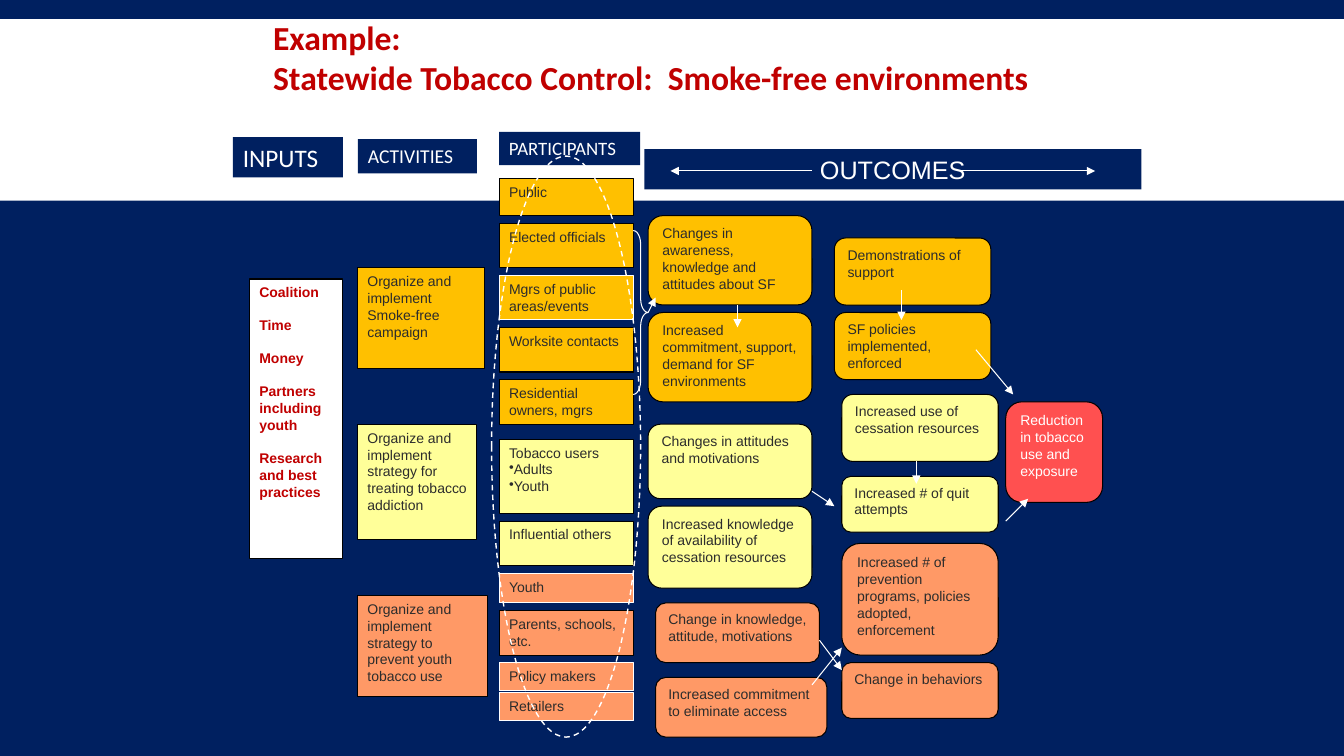
import pptx
import pptx.util
import pptx.dml.color
import pptx.enum.dml
import pptx.enum.shapes
import pptx.enum.text
import pptx.oxml.ns
import lxml.etree

# Palette
NAVY, WHITE, BLACK, INK, RED = "002060", "FFFFFF", "000000", "2C2C2C", "C00000"
GOLD, YELLOW, ORANGE, CORAL = "FFC000", "FFFF99", "FF9966", "FF5050"

# Diagram grid: square cells counted from the top left of the participants column
CELL, ORIGIN_X, ORIGIN_Y = 0.0739, 4.95, 1.77

TITLE = ["Example:", "Statewide Tobacco Control:  Smoke-free environments"]

# Column headings: text, left, top, width, height (inches), size, font
HEADINGS = [
    ("INPUTS", 2.31, 1.36, 1.09, 0.40, 18, "Calibri"),
    ("ACTIVITIES", 3.55, 1.38, 1.18, 0.34, 14, "Calibri"),
    ("PARTICIPANTS", 4.95, 1.31, 1.40, 0.33, 13.5, "Calibri"),
    ("OUTCOMES", 6.39, 1.48, 4.93, 0.40, 18, "Arial"),
]

INPUTS = ["Coalition", "Time", "Money", "Partners including youth",
          "Research and best practices"]

# Activities: row, width, height, fill, text
ACTIVITIES = [
    (12, 17, 13.5, GOLD, "Organize and implement Smoke-free campaign"),
    (33, 16, 15.5, YELLOW, "Organize and implement strategy for treating tobacco addiction"),
    (56, 17.5, 13.5, ORANGE, "Organize and implement strategy to prevent youth tobacco use"),
]

# Participants: row, height, fill, border, lines
PARTICIPANTS = [
    (0, 5, GOLD, BLACK, ["Public"]),
    (6, 6, GOLD, BLACK, ["Elected officials"]),
    (13, 6, GOLD, WHITE, ["Mgrs of public areas/events"]),
    (20, 6, GOLD, BLACK, ["Worksite contacts"]),
    (27, 6, GOLD, BLACK, ["Residential owners, mgrs"]),
    (35, 10, YELLOW, BLACK, ["Tobacco users", "•Adults", "•Youth"]),
    (46, 6, YELLOW, BLACK, ["Influential others"]),
    (53, 4, ORANGE, WHITE, ["Youth"]),
    (58, 6, ORANGE, BLACK, ["Parents, schools, etc."]),
    (65, 3.8, ORANGE, WHITE, ["Policy makers"]),
    (69, 3.8, ORANGE, WHITE, ["Retailers"]),
]

# Outcomes: column, row, width, height, fill, text
OUTCOMES = [
    (20, 5, 22, 12, GOLD, "Changes in awareness, knowledge and attitudes about SF"),
    (20, 18, 22, 12, GOLD, "Increased commitment, support, demand for SF environments"),
    (20, 33, 22, 10, YELLOW, "Changes in attitudes and motivations"),
    (20, 44, 22, 11, YELLOW, "Increased knowledge of availability of cessation resources"),
    (21, 57, 22, 8, ORANGE, "Change in knowledge, attitude, motivations"),
    (21, 67, 23, 8, ORANGE, "Increased commitment to eliminate access"),
    (45, 8, 21, 9, GOLD, "Demonstrations of support"),
    (45, 18, 21, 9, GOLD, "SF policies implemented, enforced"),
    (46, 29, 21, 9, YELLOW, "Increased use of cessation resources"),
    (46, 40, 21, 7.5, YELLOW, "Increased # of quit attempts"),
    (46, 49, 21, 15, ORANGE, "Increased # of prevention programs, policies adopted, enforcement"),
    (46, 65, 21, 7.5, ORANGE, "Change in behaviors"),
    (68, 30, 13, 13.5, CORAL, "Reduction in tobacco use and exposure"),
]

# Arrows: from column, from row, to column, to row
ARROWS = [
    (54, 15, 54, 19), (64, 23, 69, 29), (56, 38, 56, 41), (68, 46, 71, 43),
    (42, 42, 45, 44), (43, 62, 46, 66), (42, 68, 46, 63), (32, 17, 32, 20),
    (20, 18, 21, 16), (42, -1, 23, -1), (62, -1, 80, -1),
]

SHAPES = pptx.enum.shapes.MSO_SHAPE
ALIGN = pptx.enum.text.PP_ALIGN


def color(value):
    return pptx.dml.color.RGBColor.from_string(value)


def grid(column, row, width, height):
    return (ORIGIN_X + column * CELL, ORIGIN_Y + row * CELL, width * CELL, height * CELL)


def write(shape, lines, size, font="Arial", ink=INK, bold=False, align=ALIGN.LEFT, gap=0):
    frame = shape.text_frame
    frame.word_wrap = True
    frame.vertical_anchor = pptx.enum.text.MSO_ANCHOR.TOP
    for index, line in enumerate(lines):
        paragraph = frame.add_paragraph() if index else frame.paragraphs[0]
        paragraph.text = line.removeprefix("•")
        paragraph.alignment = align
        if index:
            paragraph.space_before = pptx.util.Pt(gap)
        paragraph.font.name = font
        paragraph.font.size = pptx.util.Pt(size)
        paragraph.font.bold = bold
        paragraph.font.color.rgb = color(ink)
        if line.startswith("•"):
            properties = paragraph._p.get_or_add_pPr()
            bullet = lxml.etree.SubElement(properties, pptx.oxml.ns.qn("a:buChar"))
            bullet.set("char", "•")


def add_shape(slide, kind, box, fill=None, border=None, weight=0.75):
    shape = slide.shapes.add_shape(kind, *map(pptx.util.Inches, box))
    shape.shadow.inherit = False
    if fill:
        shape.fill.solid()
        shape.fill.fore_color.rgb = color(fill)
    else:
        shape.fill.background()
    if border:
        shape.line.color.rgb = color(border)
        shape.line.width = pptx.util.Pt(weight)
    else:
        shape.line.fill.background()
    return shape


def add_arrow(slide, column_from, row_from, column_to, row_to):
    start = grid(column_from, row_from, 0, 0)[:2]
    end = grid(column_to, row_to, 0, 0)[:2]
    arrow = slide.shapes.add_connector(pptx.enum.shapes.MSO_CONNECTOR.STRAIGHT,
                                       *map(pptx.util.Inches, start + end))
    arrow.line.color.rgb = color(WHITE)
    arrow.line.width = pptx.util.Pt(0.75)
    head = lxml.etree.SubElement(arrow.line._get_or_add_ln(), pptx.oxml.ns.qn("a:tailEnd"))
    head.set("type", "triangle")
    lxml.etree.SubElement(arrow._element.spPr, pptx.oxml.ns.qn("a:effectLst"))


def main():
    presentation = pptx.Presentation()
    presentation.slide_width = pptx.util.Inches(13.33)
    presentation.slide_height = pptx.util.Inches(7.5)
    slide = presentation.slides.add_slide(presentation.slide_layouts[6])
    slide.background.fill.solid()
    slide.background.fill.fore_color.rgb = color(NAVY)

    # Title band
    add_shape(slide, SHAPES.RECTANGLE, (0, 0.19, 13.33, 1.8), WHITE)
    title = slide.shapes.add_textbox(*map(pptx.util.Inches, (2.61, 0.12, 8.99, 0.91)))
    write(title, TITLE, 24, "Calibri", RED, bold=True)

    # Column headings
    for text, left, top, width, height, size, font in HEADINGS:
        heading = add_shape(slide, SHAPES.RECTANGLE, (left, top, width, height), NAVY)
        align = ALIGN.CENTER if text == "OUTCOMES" else ALIGN.LEFT
        write(heading, [text], size, font, WHITE, align=align)

    # Inputs, activities and participants
    inputs = add_shape(slide, SHAPES.RECTANGLE, grid(-33.5, 13.5, 12.5, 37.5), WHITE, BLACK)
    write(inputs, INPUTS, 10, ink=RED, bold=True, gap=11.5)
    for row, width, height, fill, text in ACTIVITIES:
        activity = add_shape(slide, SHAPES.RECTANGLE, grid(-19, row, width, height), fill, BLACK)
        write(activity, [text], 10)
    for row, height, fill, border, lines in PARTICIPANTS:
        participant = add_shape(slide, SHAPES.RECTANGLE, grid(0, row, 18, height), fill, border)
        write(participant, lines, 10)

    # Outcomes
    for column, row, width, height, fill, text in OUTCOMES:
        outcome = add_shape(slide, SHAPES.ROUNDED_RECTANGLE,
                            grid(column, row, width, height), fill, BLACK)
        write(outcome, [text], 10, ink=WHITE if fill == CORAL else INK)

    # Participants outline, brace and arrows
    outline = add_shape(slide, SHAPES.OVAL, grid(-1, -3, 20, 78), border=WHITE, weight=1)
    outline.line.dash_style = pptx.enum.dml.MSO_LINE.DASH
    brace = add_shape(slide, SHAPES.RIGHT_BRACE, grid(18, 7, 2, 22), border=WHITE)
    brace.adjustments[0] = 0.92
    for arrow in ARROWS:
        add_arrow(slide, *arrow)

    presentation.save("out.pptx")


if __name__ == "__main__":
    main()
